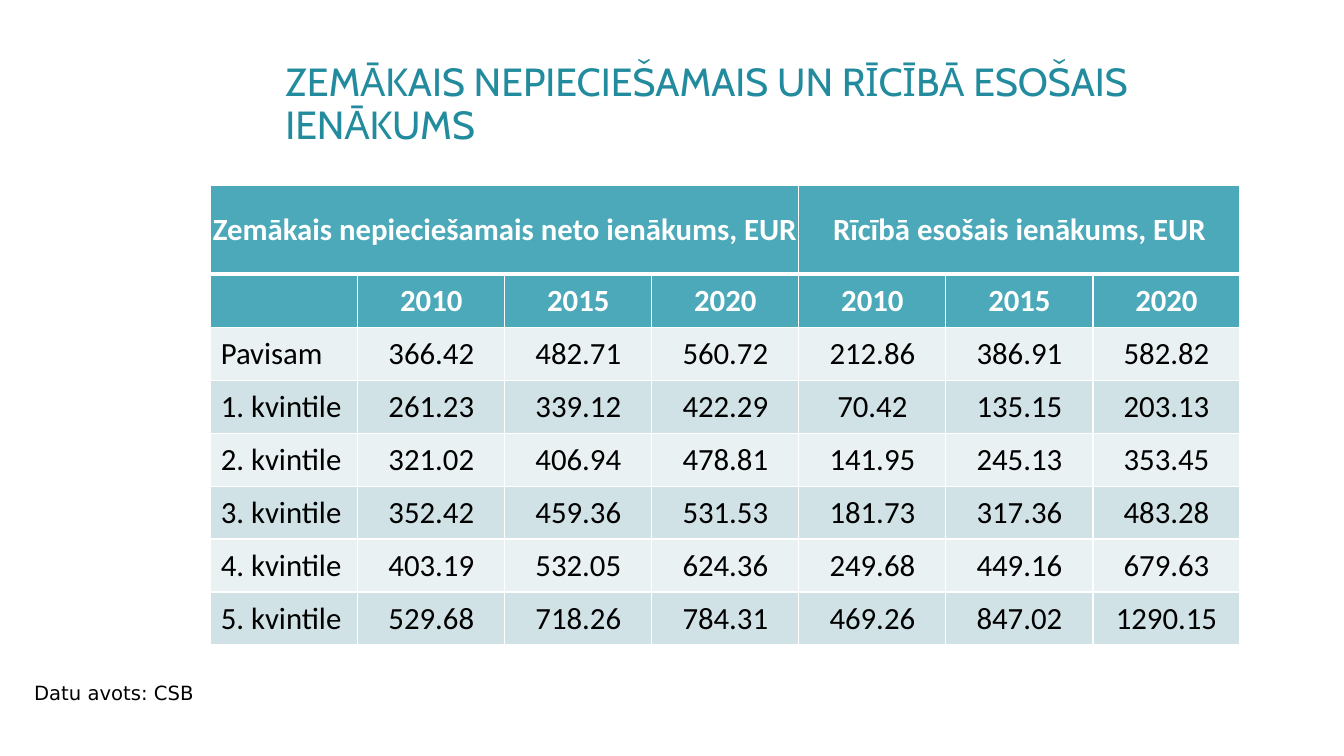
import pptx
import pptx.util
import pptx.dml.color
import pptx.enum.text
import lxml.etree

Inches = pptx.util.Inches
Pt = pptx.util.Pt
RGBColor = pptx.dml.color.RGBColor
Align = pptx.enum.text.PP_ALIGN
Anchor = pptx.enum.text.MSO_ANCHOR

TITLE = RGBColor(0x22, 0x8B, 0x9D)
HEAD = RGBColor(0x4C, 0xA9, 0xB9)
LIGHT = RGBColor(0xE9, 0xF1, 0xF3)
DARK = RGBColor(0xD0, 0xE2, 0xE6)
WHITE = RGBColor(0xFF, 0xFF, 0xFF)
BLACK = RGBColor(0x00, 0x00, 0x00)
DRAWML = "{http://schemas.openxmlformats.org/drawingml/2006/main}"

GROUPS = [(0, 3, "Zemākais nepieciešamais neto ienākums, EUR"),
          (4, 6, "Rīcībā esošais ienākums, EUR")]
ROWS = [
    ["", "2010", "2015", "2020", "2010", "2015", "2020"],
    ["Pavisam", "366.42", "482.71", "560.72", "212.86", "386.91", "582.82"],
    ["1. kvintile", "261.23", "339.12", "422.29", "70.42", "135.15", "203.13"],
    ["2. kvintile", "321.02", "406.94", "478.81", "141.95", "245.13", "353.45"],
    ["3. kvintile", "352.42", "459.36", "531.53", "181.73", "317.36", "483.28"],
    ["4. kvintile", "403.19", "532.05", "624.36", "249.68", "449.16", "679.63"],
    ["5. kvintile", "529.68", "718.26", "784.31", "469.26", "847.02", "1290.15"],
]


def style(para, font, size, color, bold=False):
    for run in para.runs:
        run.font.name = font
        run.font.size = Pt(size)
        run.font.color.rgb = color
        run.font.bold = bold


def add_title(slide, left, top, width, height):
    title = slide.shapes.title
    title.left, title.top = Inches(left), Inches(top)
    title.width, title.height = Inches(width), Inches(height)
    frame = title.text_frame
    frame.text = "ZEMĀKAIS NEPIECIEŠAMAIS UN RĪCĪBĀ ESOŠAIS IENĀKUMS"
    frame.word_wrap = True
    frame.auto_size = pptx.enum.text.MSO_AUTO_SIZE.NONE
    frame.vertical_anchor = Anchor.MIDDLE
    para = frame.paragraphs[0]
    para.alignment = Align.LEFT
    para.line_spacing = 0.9
    style(para, "Cabin", 28, TITLE)


def add_edges(cell, row):
    props = cell._tc.get_or_add_tcPr()
    thick = {0: "lnB", 1: "lnT"}.get(row)
    for side in ("lnL", "lnR", "lnT", "lnB"):
        width = Pt(3 if side == thick else 1)
        line = lxml.etree.SubElement(props, DRAWML + side, w=str(width))
        fill = lxml.etree.SubElement(line, DRAWML + "solidFill")
        lxml.etree.SubElement(fill, DRAWML + "srgbClr", val=str(WHITE))


def fill_cell(cell, text, row, label):
    head = row < 2
    add_edges(cell, row)
    cell.fill.solid()
    cell.fill.fore_color.rgb = HEAD if head else (LIGHT, DARK)[row % 2]
    cell.vertical_anchor = Anchor.MIDDLE
    cell.margin_left = cell.margin_right = 0
    cell.margin_top = cell.margin_bottom = 0
    cell.text_frame.text = text
    para = cell.text_frame.paragraphs[0]
    para.alignment = Align.LEFT if label else Align.CENTER
    if label:
        para._p.get_or_add_pPr().set("marL", str(Inches(0.1)))
    style(para, "Calibri", 22, WHITE if head else BLACK, head)


def add_table(slide, left, top, width, height):
    cols = len(ROWS[0])
    first = 0.88
    step = (height - first) / len(ROWS)
    table = slide.shapes.add_table(
        len(ROWS) + 1, cols, Inches(left), Inches(top),
        Inches(width), Inches(height)).table
    for col in table.columns:
        col.width = Inches(width / cols)
    for row in table.rows:
        row.height = Inches(step)
    table.rows[0].height = Inches(first)
    heads = [""] * cols
    for start, end, text in GROUPS:
        heads[start] = text
        table.cell(0, start).merge(table.cell(0, end))
    for row, texts in enumerate([heads] + ROWS):
        for col, text in enumerate(texts):
            fill_cell(table.cell(row, col), text, row, row > 1 and col == 0)


def add_source(slide, left, top, width, height):
    box = slide.shapes.add_textbox(
        Inches(left), Inches(top), Inches(width), Inches(height))
    frame = box.text_frame
    frame.word_wrap = True
    frame.text = "Datu avots: CSB"
    style(frame.paragraphs[0], "DejaVu Sans", 14, BLACK)


def main():
    deck = pptx.Presentation()
    deck.slide_width, deck.slide_height = Inches(13.33), Inches(7.5)
    slide = deck.slides.add_slide(deck.slide_layouts[5])
    add_title(slide, 2.73, 0.61, 10.33, 0.87)
    add_table(slide, 2.09, 1.84, 10.21, 4.56)
    add_source(slide, 0.24, 6.71, 4.2, 0.34)
    deck.save("out.pptx")


if __name__ == "__main__":
    main()
